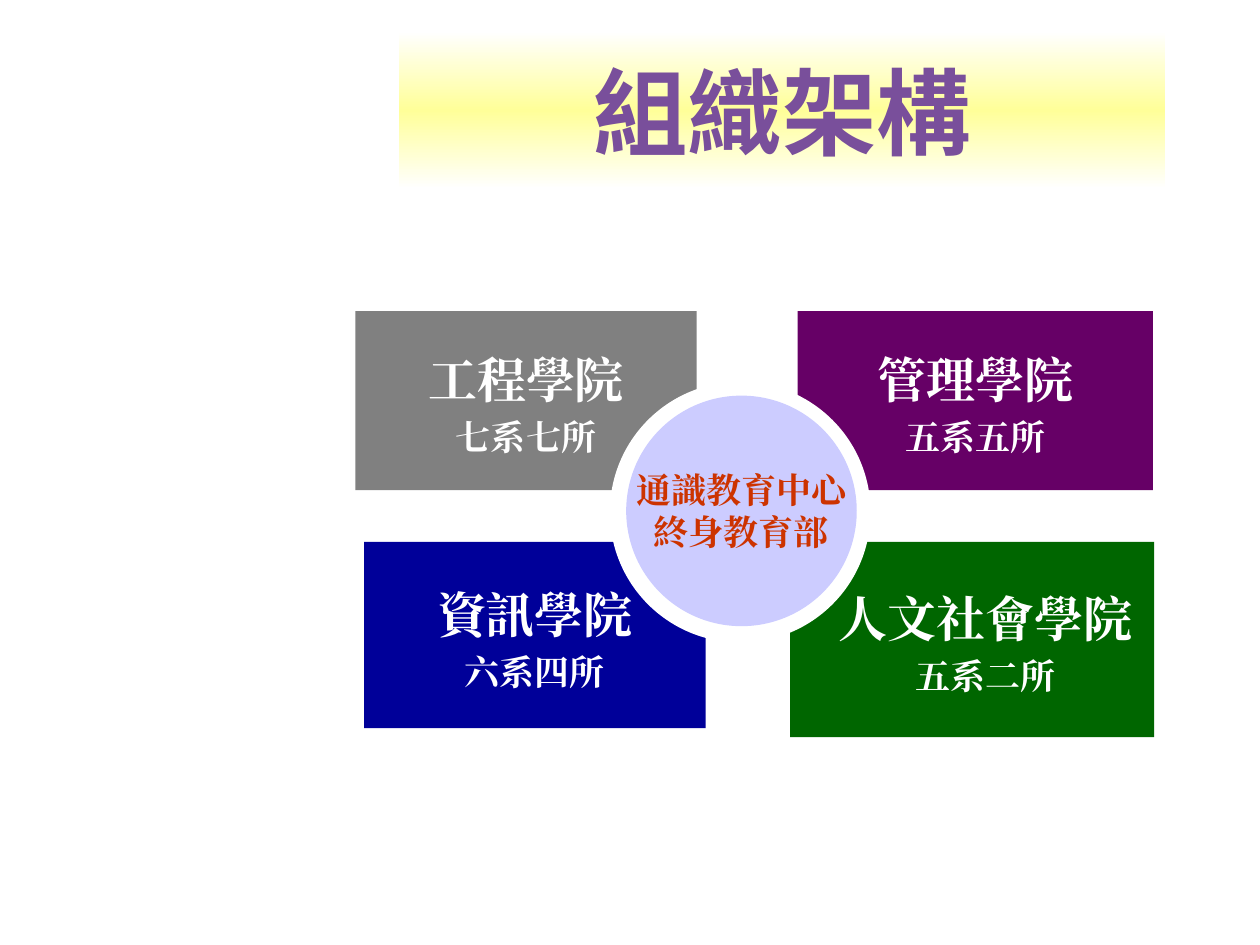
from copy import deepcopy
from pptx import Presentation
from pptx.dml.color import RGBColor
from pptx.enum.shapes import MSO_SHAPE
from pptx.enum.text import MSO_ANCHOR, PP_ALIGN
from pptx.oxml.ns import qn
from pptx.util import Inches, Pt

WHITE = RGBColor(0xFF, 0xFF, 0xFF)
YELLOW = RGBColor(0xFF, 0xFF, 0x99)
VIOLET = RGBColor(0x79, 0x4F, 0x9B)
GRAY = RGBColor(0x80, 0x80, 0x80)
PURPLE = RGBColor(0x66, 0x00, 0x66)
NAVY = RGBColor(0x00, 0x00, 0x99)
GREEN = RGBColor(0x00, 0x66, 0x00)
LAVENDER = RGBColor(0xCC, 0xCC, 0xFF)
RED = RGBColor(0xCC, 0x33, 0x00)

TITLE = "組織架構"
COLLEGES = [
    ("工程學院", "七系七所", GRAY, (2.82, 2.47, 2.71, 1.42), (0, 0)),
    ("管理學院", "五系五所", PURPLE, (6.33, 2.47, 2.82, 1.42), (0.43, -0.43)),
    ("資訊學院", "六系四所", NAVY, (2.89, 4.3, 2.71, 1.48), (0, 0)),
    ("人文社會學院", "五系二所", GREEN, (6.27, 4.3, 2.89, 1.55), (0.72, -0.51)),
]
CENTERS = ["通識教育中心", "終身教育部"]
RING = (4.84, 3.03, 2.07, 2.07)
CORE = (4.97, 3.14, 1.83, 1.83)


def add_block(s, kind, box, color):
    sp = s.shapes.add_shape(kind, *map(Inches, box))
    sp.shadow.inherit = False
    sp.fill.solid()
    sp.fill.fore_color.rgb = color
    sp.line.fill.background()
    return sp


def format_run(p, size, color, font):
    p.alignment = PP_ALIGN.CENTER
    r = p.runs[0]
    r.font.size = Pt(size)
    r.font.bold = True
    r.font.color.rgb = color
    r.font.name = font
    ea = r.font._element.makeelement(qn("a:ea"), {"typeface": font})
    r.font._element.find(qn("a:latin")).addnext(ea)


def write_lines(sp, lines, sizes, color, indent=(0, 0), gap=0):
    tf = sp.text_frame
    tf.word_wrap = False
    tf.vertical_anchor = MSO_ANCHOR.MIDDLE
    tf.text = "\n".join(lines)
    for p, size in zip(tf.paragraphs, sizes):
        pPr = p._p.get_or_add_pPr()
        pPr.set("marL", str(Inches(indent[0])))
        pPr.set("indent", str(Inches(indent[1])))
        format_run(p, size, color, "Times New Roman")
    tf.paragraphs[-1].space_before = Pt(gap)


def add_title(s):
    sp = s.shapes.title
    sp.left, sp.top, sp.width, sp.height = map(Inches, (3.17, 0.25, 6.08, 1.25))
    sp.fill.gradient()
    sp.fill.gradient_angle = 90
    stops = sp.fill.gradient_stops
    first = sp.fill._xPr.find(qn("a:gradFill")).find(qn("a:gsLst"))[0]
    first.addnext(deepcopy(first))
    stops = sp.fill.gradient_stops
    for stop, position, color in zip(stops, (0, 0.5, 1), (WHITE, YELLOW, WHITE)):
        stop.position = position
        stop.color.rgb = color
    tf = sp.text_frame
    tf.text = TITLE
    tf.vertical_anchor = MSO_ANCHOR.MIDDLE
    format_run(tf.paragraphs[0], 54, VIOLET, "Noto Sans CJK SC")


def main():
    prs = Presentation()
    prs.slide_width, prs.slide_height = Inches(10), Inches(7.5)
    s = prs.slides.add_slide(prs.slide_layouts[5])
    add_title(s)
    for name, units, color, box, indent in COLLEGES:
        sp = add_block(s, MSO_SHAPE.RECTANGLE, box, color)
        sp.text_frame.margin_top = Inches(0.1)
        write_lines(sp, (name, units), (28, 20), WHITE, indent, gap=4)
    add_block(s, MSO_SHAPE.OVAL, RING, WHITE)
    core = add_block(s, MSO_SHAPE.OVAL, CORE, LAVENDER)
    write_lines(core, CENTERS, (20, 20), RED)
    prs.save("out.pptx")


if __name__ == "__main__":
    main()
